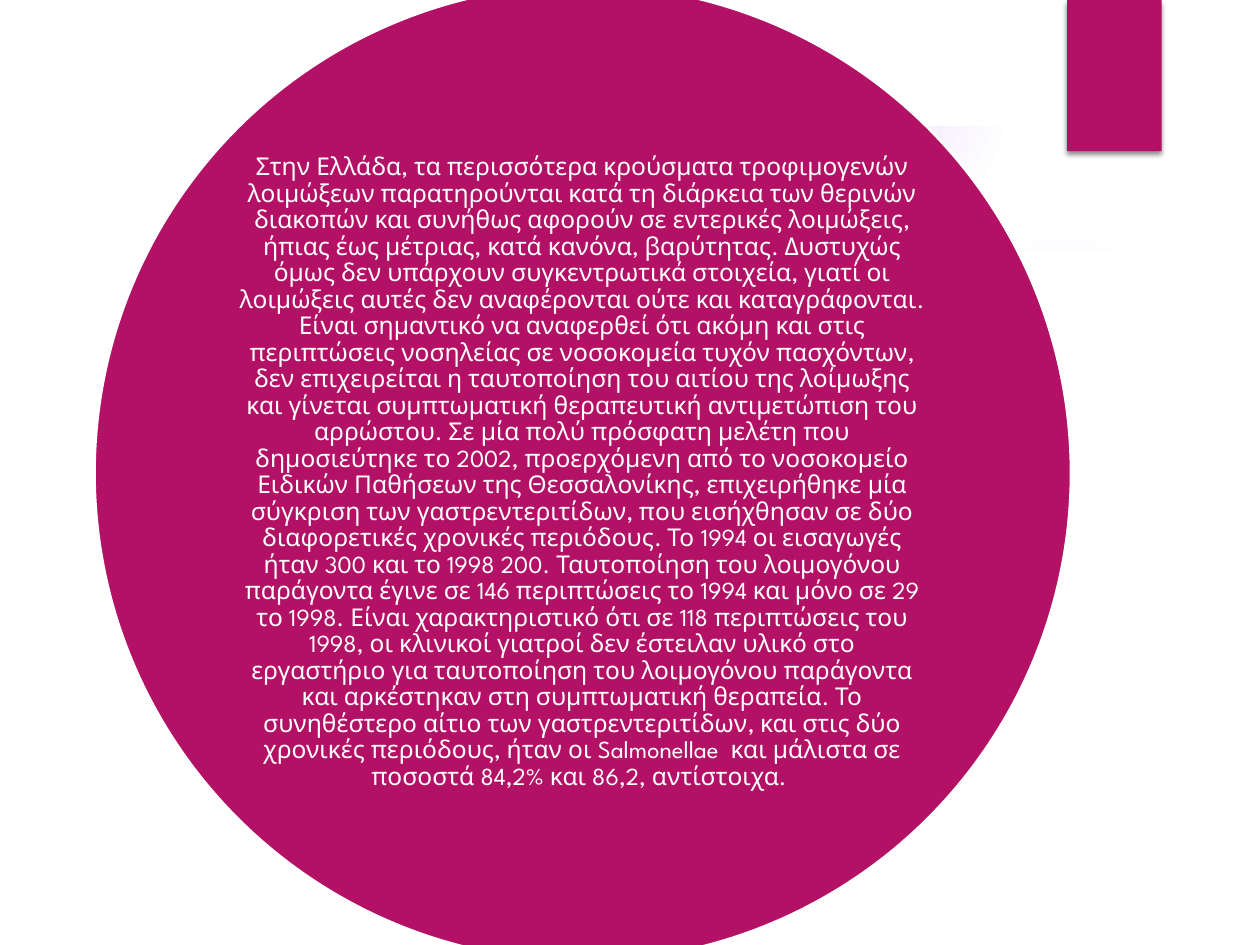
"""Build a slide with one large text circle over a faint violet glow."""
from lxml import etree
from pptx import Presentation
from pptx import util as u
from pptx.dml.color import RGBColor
from pptx.enum import shapes, text
from pptx.oxml import ns, parse_xml

MAGENTA = RGBColor(0xB3, 0x11, 0x66)
VIOLET = RGBColor(0x9B, 0x6B, 0xF2)
WHITE = RGBColor(0xFF, 0xFF, 0xFF)

SENTENCES = [
    "Στην Ελλάδα, τα περισσότερα κρούσματα τροφιμογενών λοιμώξεων παρατηρούνται κατά τη "
    "διάρκεια των θερινών διακοπών και συνήθως αφορούν σε εντερικές λοιμώξεις, ήπιας έως "
    "μέτριας, κατά κανόνα, βαρύτητας.",
    "Δυστυχώς όμως δεν υπάρχουν συγκεντρωτικά στοιχεία, γιατί οι λοιμώξεις αυτές δεν "
    "αναφέρονται ούτε και καταγράφονται.",
    "Είναι σημαντικό να αναφερθεί ότι ακόμη και στις περιπτώσεις νοσηλείας σε νοσοκομεία "
    "τυχόν πασχόντων, δεν επιχειρείται η ταυτοποίηση του αιτίου της λοίμωξης και γίνεται "
    "συμπτωματική θεραπευτική αντιμετώπιση του αρρώστου.",
    "Σε μία πολύ πρόσφατη μελέτη που δημοσιεύτηκε το 2002, προερχόμενη από το νοσοκομείο "
    "Ειδικών Παθήσεων της Θεσσαλονίκης, επιχειρήθηκε μία σύγκριση των γαστρεντεριτίδων, "
    "που εισήχθησαν σε δύο διαφορετικές χρονικές περιόδους.",
    "Το 1994 οι εισαγωγές ήταν 300 και το 1998 200.",
    "Ταυτοποίηση του λοιμογόνου παράγοντα έγινε σε 146 περιπτώσεις το 1994 και μόνο σε 29 "
    "το 1998.",
    "Είναι χαρακτηριστικό ότι σε 118 περιπτώσεις του 1998, οι κλινικοί γιατροί δεν "
    "έστειλαν υλικό στο εργαστήριο για ταυτοποίηση του λοιμογόνου παράγοντα και "
    "αρκέστηκαν στη συμπτωματική θεραπεία.",
    "Το συνηθέστερο αίτιο των γαστρεντεριτίδων, και στις δύο χρονικές περιόδους, ήταν οι "
    "Salmonellae  και μάλιστα σε ποσοστά 84,2% και 86,2, αντίστοιχα. ",
]

deck = Presentation()
deck.slide_width, deck.slide_height = u.Inches(10), u.Inches(7.5)
page = deck.slides.add_slide(deck.slide_layouts[6])


def add_plain(kind, bounds, color):
    shape = page.shapes.add_shape(kind, *map(u.Inches, bounds))
    shape.shadow.inherit = False
    shape.fill.solid()
    shape.fill.fore_color.rgb = color
    shape.line.fill.background()
    return shape


def add_outline(*contours):
    builder = None
    for start, *rest in contours:
        if builder is None:
            builder = page.shapes.build_freeform(*start, scale=u.Inches(1))
        else:
            builder.move_to(*start)
        builder.add_line_segments(rest, close=True)
    shape = builder.convert_to_shape()
    shape.shadow.inherit = False
    shape.fill.solid()
    shape.fill.fore_color.rgb = WHITE
    shape.line.fill.background()
    return shape


GLOWS = [
    ((6.89, 1.83, 3.08, 3.08), [(0, 7), (36, 6), (69, 0)]),
    ((6.22, 0, 1.75, 1.75), [(0, 14), (36, 7), (73, 0)]),
]
for bounds, stops in GLOWS:
    glow = add_plain(shapes.MSO_SHAPE.OVAL, bounds, VIOLET)
    stop_xml = "".join(
        f'<a:gs pos="{place * 1000}"><a:srgbClr val="{VIOLET}">'
        f'<a:alpha val="{alpha * 1000}"/></a:srgbClr></a:gs>'
        for place, alpha in stops
    )
    gradient = parse_xml(
        f'<a:gradFill {ns.nsdecls("a")} rotWithShape="1"><a:gsLst>{stop_xml}</a:gsLst>'
        '<a:path path="circle"><a:fillToRect l="50000" t="50000" r="50000" b="50000"/>'
        "</a:path></a:gradFill>"
    )
    properties = glow._element.spPr
    properties.replace(properties.find(ns.qn("a:solidFill")), gradient)

streak = add_outline([
    (6.99, 2.34), (7.7, 2.33), (8.6, 2.23), (9.56, 2.08), (9.51, 1.74),
    (9.01, 1.9), (8.5, 2.03), (8.01, 2.13), (7.47, 2.23), (6.96, 2.29),
])
streak.rotation = 350.2
streak_color = streak._element.spPr.find(".//" + ns.qn("a:srgbClr"))
etree.SubElement(streak_color, ns.qn("a:alpha"), val="20000")

add_outline([
    (0.53, 2.03), (0.53, 6.99), (9.47, 6.99), (9.47, 2.03), (9.06, 2.09),
    (8.66, 2.15), (8.25, 2.19), (7.85, 2.24), (7.04, 2.29), (6.25, 2.33),
    (5.48, 2.34), (4.39, 2.34), (3.38, 2.3), (2.22, 2.22), (1.32, 2.13),
])
add_outline(
    [(0, 0), (0, 7.5), (10, 7.5), (10, 0)],
    [(9.45, 6.95), (9.45, 0.56), (0.56, 0.56), (0.56, 6.95)],
)

ribbon = add_plain(shapes.MSO_SHAPE.RECTANGLE, (8.47, 0, 0.75, 1.2), MAGENTA)
effects = ribbon._element.spPr.find(ns.qn("a:effectLst"))
effects.append(parse_xml(
    f'<a:outerShdw {ns.nsdecls("a")} blurRad="{u.Pt(3)}" dist="{u.Pt(2)}" dir="5400000" '
    'rotWithShape="0"><a:srgbClr val="000000"><a:alpha val="45000"/></a:srgbClr></a:outerShdw>'
))

circle = add_plain(shapes.MSO_SHAPE.OVAL, (0.75, -0.12, 7.75, 7.75), MAGENTA)
circle.line.color.rgb = WHITE
circle.line.width = u.Pt(1.5)

box = page.shapes.add_textbox(*map(u.Inches, (1.88, 1.01, 5.48, 5.48)))
frame = box.text_frame
FRAME_FORMAT = {"word_wrap": True, "vertical_anchor": text.MSO_ANCHOR.MIDDLE}
FRAME_FORMAT |= {
    f"margin_{side}": u.Inches(0.02) for side in ("left", "top", "right", "bottom")
}
for name, value in FRAME_FORMAT.items():
    setattr(frame, name, value)
para = frame.paragraphs[0]
for name, value in {"alignment": text.PP_ALIGN.CENTER, "line_spacing": 0.9}.items():
    setattr(para, name, value)
span = para.add_run()
span.text = " ".join(SENTENCES)
for name, value in {"name": "League Spartan", "size": u.Pt(14)}.items():
    setattr(span.font, name, value)
span.font.color.rgb = WHITE

deck.save("out.pptx")
